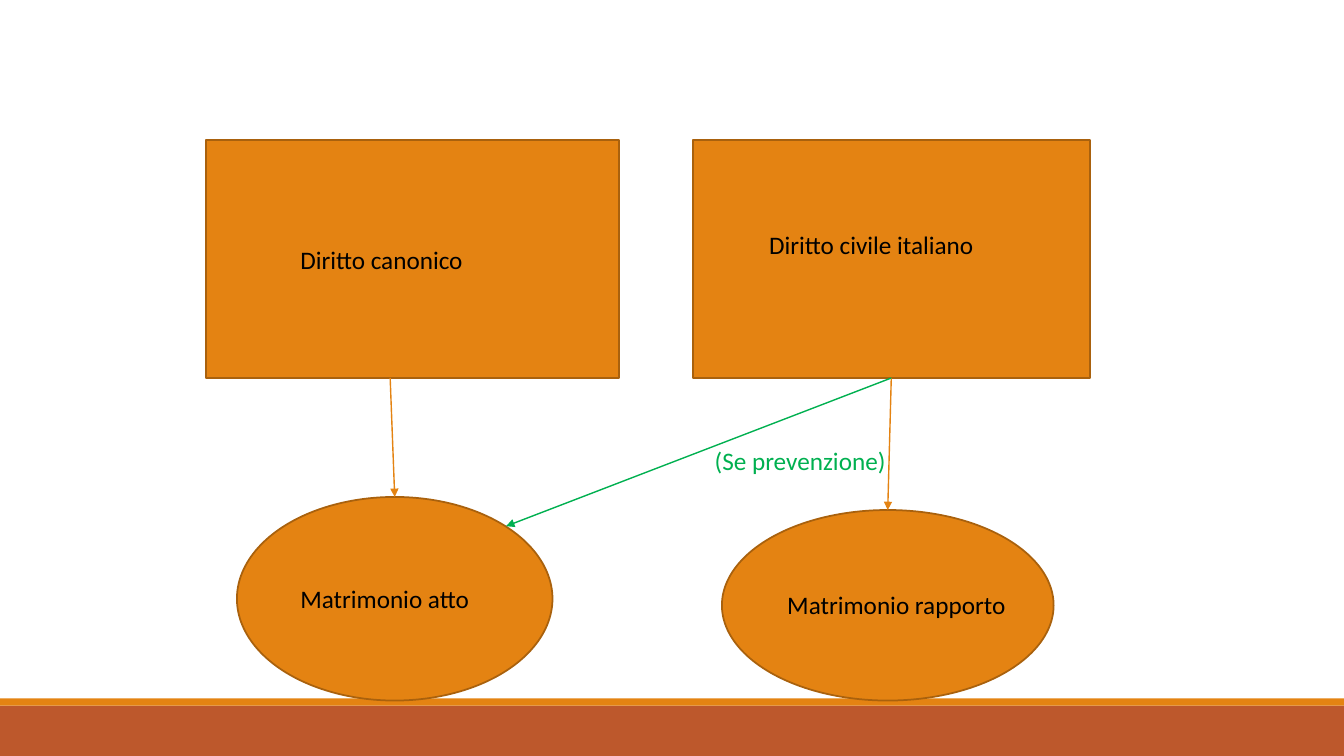
from dataclasses import dataclass
from typing import NamedTuple

from lxml.etree import SubElement
from pptx import Presentation
from pptx.dml.color import RGBColor
from pptx.enum.shapes import MSO_CONNECTOR as Connector, MSO_SHAPE as Shape
from pptx.enum.text import MSO_AUTO_SIZE as AutoSize
from pptx.oxml.ns import qn
from pptx.util import Inches, Pt


@dataclass(frozen=True)
class Theme:
    orange: RGBColor = RGBColor(0xE4, 0x83, 0x12)
    outline: RGBColor = RGBColor(0xA9, 0x61, 0x0D)
    rust: RGBColor = RGBColor(0xBD, 0x58, 0x2C)
    green: RGBColor = RGBColor(0x00, 0xB0, 0x50)
    black: RGBColor = RGBColor(0, 0, 0)
    font: str = "Calibri"
    text_size: Pt = Pt(18)
    outline_width: Pt = Pt(1.25)
    arrow_width: Pt = Pt(1)


class Box(NamedTuple):
    left: float
    top: float
    width: float
    height: float

    def inner(self, left, top, width, height):
        return Box(self.left + left, self.top + top, width, height)

    def lengths(self):
        return [Inches(value) for value in self]


THEME = Theme()
LABEL_HEIGHT = 0.4


def add_filled(slide, kind, box, fill, outline=None):
    shape = slide.shapes.add_shape(kind, *box.lengths())
    shape.shadow.inherit = False
    shape.fill.solid()
    shape.fill.fore_color.rgb = fill
    if outline is None:
        shape.line.fill.background()
    else:
        shape.line.color.rgb = outline
        shape.line.width = THEME.outline_width


def add_label(slide, box, text, color=THEME.black):
    frame = slide.shapes.add_textbox(*box.lengths()).text_frame
    frame.word_wrap = True
    frame.auto_size = AutoSize.SHAPE_TO_FIT_TEXT
    paragraph = frame.paragraphs[0]
    paragraph.text = text
    paragraph.font.name = THEME.font
    paragraph.font.size = THEME.text_size
    paragraph.font.color.rgb = color


def add_arrow(slide, start, end, color):
    points = [Inches(value) for value in (*start, *end)]
    arrow = slide.shapes.add_connector(Connector.STRAIGHT, *points)
    arrow.line.color.rgb = color
    arrow.line.width = THEME.arrow_width
    SubElement(arrow.line._get_or_add_ln(), qn("a:tailEnd"), type="triangle")
    SubElement(arrow._element.spPr, qn("a:effectLst"))


def draw_footer(slide, box):
    stripe = 0.07
    add_filled(slide, Shape.RECTANGLE,
               box.inner(0, stripe, box.width, box.height - stripe), THEME.rust)
    add_filled(slide, Shape.RECTANGLE,
               box.inner(0, 0, box.width, stripe), THEME.orange)


def draw_node(slide, kind, box, text, label_left, label_top, label_width):
    add_filled(slide, kind, box, THEME.orange, THEME.outline)
    add_label(slide, box.inner(label_left, label_top, label_width, LABEL_HEIGHT), text)


def draw_canon_law(slide, box):
    marriage_act = box.inner(0.31, 3.54, 3.13, 2.02)
    draw_node(slide, Shape.RECTANGLE, box.inner(0, 0, box.width, 2.36),
              "Diritto canonico", 0.84, 0.98, 3.45)
    draw_node(slide, Shape.OVAL, marriage_act, "Matrimonio atto", 0.53, 0.81, 2.2)
    add_arrow(slide, box.inner(1.83, 2.36, 0, 0)[:2],
              marriage_act.inner(marriage_act.width / 2, 0, 0, 0)[:2], THEME.orange)


def draw_civil_law(slide, box):
    marriage_bond = box.inner(0.29, 3.67, 3.29, 1.89)
    draw_node(slide, Shape.RECTANGLE, box.inner(0, 0, box.width, 2.36),
              "Diritto civile italiano", 0.66, 0.84, 2.62)
    draw_node(slide, Shape.OVAL, marriage_bond, "Matrimonio rapporto", 0.55, 0.74, 2.44)
    add_arrow(slide, box.inner(box.width / 2, 2.36, 0, 0)[:2],
              marriage_bond.inner(marriage_bond.width / 2, 0, 0, 0)[:2], THEME.orange)


def draw_prevention(slide, box):
    add_arrow(slide, (box.left + box.width, box.top),
              (box.left, box.top + box.height), THEME.green)
    add_label(slide, box.inner(1.97, 0.62, 2.26, LABEL_HEIGHT),
              "(Se prevenzione)", THEME.green)


def main():
    presentation = Presentation()
    presentation.slide_width = Inches(13.33)
    presentation.slide_height = Inches(7.5)
    slide = presentation.slides.add_slide(presentation.slide_layouts[6])
    draw_footer(slide, Box(0, 6.93, 13.33, 0.57))
    draw_canon_law(slide, Box(2.04, 1.39, 4.1, 5.56))
    draw_civil_law(slide, Box(6.87, 1.39, 3.94, 5.56))
    draw_prevention(slide, Box(5.02, 3.75, 3.82, 1.47))
    presentation.save("out.pptx")


if __name__ == "__main__":
    main()
